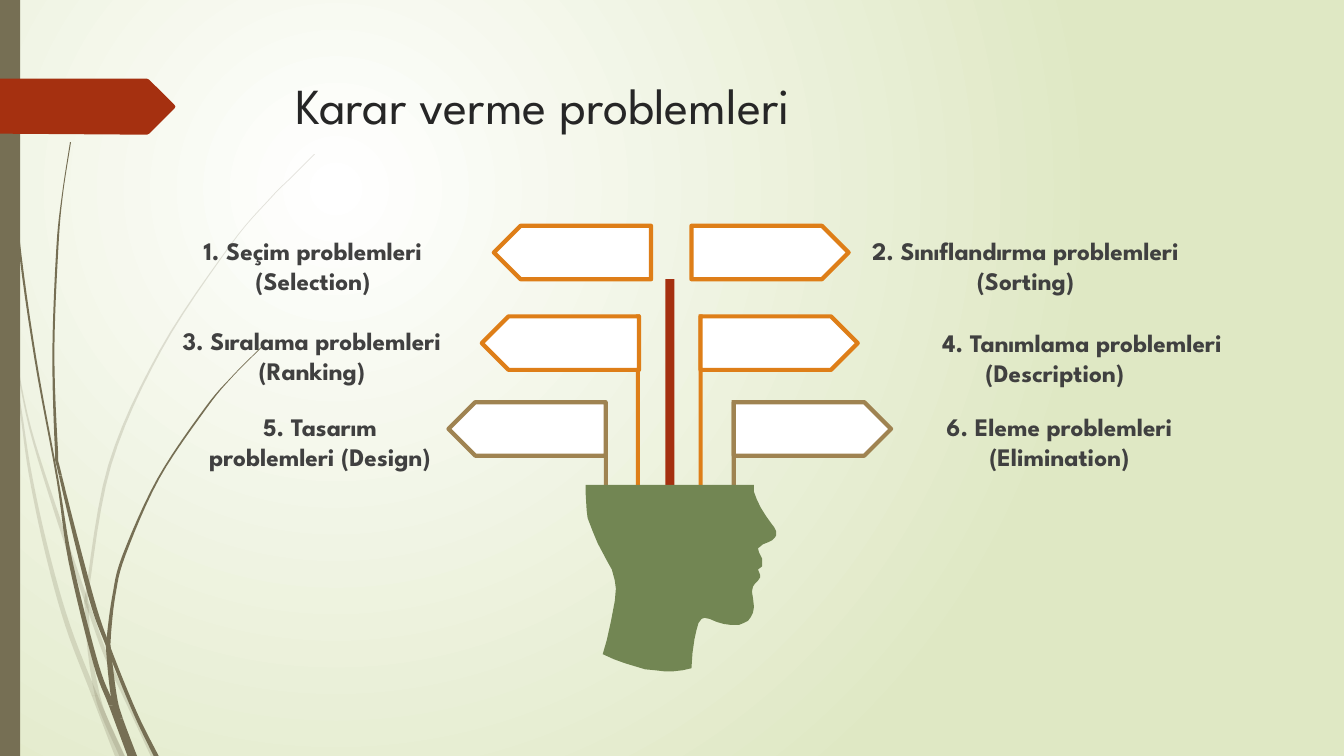
from dataclasses import dataclass

from lxml.etree import SubElement
from pptx import Presentation
from pptx.dml.color import RGBColor
from pptx.enum.shapes import MSO_SHAPE
from pptx.enum.text import PP_ALIGN
from pptx.oxml.ns import qn
from pptx.util import Pt


@dataclass(frozen=True)
class Theme:
    font: str = "League Spartan"
    title_size: int = 36
    label_size: int = 18
    title: str = "262626"
    label: str = "404040"
    white: str = "FFFFFF"
    edge: str = "DFE8C4"
    stem: str = "766F54"
    red: str = "A53010"
    orange: str = "DE7E18"
    tan: str = "9F8351"
    green: str = "728653"


@dataclass(frozen=True)
class Box:
    left: float
    top: float
    width: float
    height: float

    def inner(self, left, top, width, height):
        return Box(self.left + left, self.top + top, width, height)

    def lengths(self):
        return [Pt(value) for value in (self.left, self.top, self.width, self.height)]


THEME = Theme()
PAGE = Box(0, 0, 960, 540)

WISP_GRID = (312, 750)
PALE_WISPS = [
    ((1, 6), [(0, 290, 1), (11, 348, 2), (21, 410, 2), (30, 470, 3), (46, 545, 4), (67, 620, 5),
              (94, 690, 6), (119, 750, 10)]),
    ((3, 4), [(14, 345, 1), (30, 425, 2), (60, 521, 4), (86, 597, 4), (90, 608, 4), (105, 650, 4),
              (125, 693, 4), (152, 750, 5)]),
    ((6, 7, 10), [(312, 153, 1), (290, 175, 1), (268, 197, 1), (228, 244, 1), (159, 348, 2), (109, 461, 3),
                  (87, 584, 3), (86, 603, 4), (89, 646, 4), (96, 687, 5), (104, 712, 5), (121, 750, 5)]),
]
DARK_WISPS = [
    ((4, 7), [(4, 0, 1), (8, 110, 1), (18, 233, 2), (35, 355, 2), (57, 475, 2), (70, 557, 4),
              (95, 658, 5), (111, 700, 6), (131, 750, 9)]),
    ((5, 7), [(70, 141, 1), (62, 193, 1), (57, 245, 2), (53, 349, 2), (56, 445, 3), (60, 472, 3),
              (90, 591, 5), (108, 643, 4), (134, 707, 4), (155, 750, 5)]),
    ((6, 7, 9), [(260, 344, 1), (231, 373, 1), (204, 405, 2), (157, 475, 2), (123, 551, 3), (113, 591, 3),
                 (108, 632, 4), (108, 648, 5), (113, 691, 6), (119, 713, 6), (134, 750, 4)]),
]
BANNER_GRID = (174, 56)
BANNER = [(0, 0), (146, 0), (148, 1), (173, 26), (174, 28), (173, 30), (148, 55), (146, 56), (0, 55)]
HEAD_GRID = (189, 185)
HEAD = [
    (0, 0), (167, 0), (167, 7), (170, 15), (174, 23), (179, 31), (184, 38), (187, 42), (189, 46), (189, 50),
    (188, 52), (185, 55), (181, 57), (176, 59), (171, 63), (172, 67), (175, 73), (175, 81), (171, 84),
    (173, 89), (173, 92), (171, 95), (168, 98), (166, 101), (165, 106), (166, 112), (167, 121), (166, 127),
    (164, 131), (161, 135), (157, 137), (152, 139), (144, 139), (137, 138), (130, 136), (123, 133),
    (118, 132), (115, 133), (112, 137), (110, 144), (108, 153), (106, 167), (105, 182), (96, 184), (87, 185),
    (78, 185), (69, 184), (59, 183), (49, 180), (39, 177), (28, 173), (17, 168), (21, 154), (25, 136),
    (29, 115), (30, 103), (29, 95), (26, 84), (21, 75), (12, 58), (7, 46), (2, 33), (1, 25), (0, 8),
]
SIGN_ROWS = [(161.3, 352.8, 493.9, THEME.orange), (226, 344.2, 500.4, THEME.orange),
             (287.3, 320.4, 524.2, THEME.tan)]
POSTS = [
    (431.3, 287.3, 2.9, 73.4, THEME.tan),
    (522.7, 285.8, 2.9, 73.4, THEME.tan),
    (454.3, 224.6, 2.9, 136.1, THEME.orange),
    (499, 224.6, 2.9, 136.1, THEME.orange),
    (475.2, 199.4, 6.5, 162, THEME.red),
]
LABELS = [
    ("1. Seçim problemleri (Selection)", 101.2, 164.2, 244.8, 0),
    ("2. Sınıflandırma problemleri (Sorting)", 605.8, 164.2, 253.4, 0),
    ("3. Sıralama problemleri (Ranking)", 110.5, 228.7, 224.6, 0),
    ("4. Tanımlama problemleri (Description)", 610.6, 230.4, 285.8, 39),
    ("5. Tasarım problemleri (Design)", 136.1, 290.2, 185, 0),
    ("6. Eleme problemleri (Elimination)", 634.3, 290.2, 244.8, 0),
]


def paint(shape, fill):
    shape.shadow.inherit = False
    shape.fill.solid()
    shape.fill.fore_color.rgb = RGBColor.from_string(fill)
    shape.line.fill.background()
    return shape


def add_preset(page, box, kind, fill):
    return paint(page.shapes.add_shape(kind, *box.lengths()), fill)


def add_outline(page, box, grid, points, fill):
    corners = [(Pt(box.left + x * box.width / grid[0]), Pt(box.top + y * box.height / grid[1]))
               for x, y in points]
    builder = page.shapes.build_freeform(*corners[0])
    builder.add_line_segments(corners[1:], close=True)
    return paint(builder.convert_to_shape(), fill)


def add_text(page, box, text, size, color, bold=False, align=PP_ALIGN.LEFT, indent=0):
    frame = page.shapes.add_textbox(*box.lengths()).text_frame
    frame.word_wrap = True
    para = frame.paragraphs[0]
    para.alignment = align
    para._p.get_or_add_pPr().set("indent", str(Pt(indent)))
    span = para.add_run()
    span.text = text
    for name, value in {"name": THEME.font, "size": Pt(size), "bold": bold}.items():
        setattr(span.font, name, value)
    span.font.color.rgb = RGBColor.from_string(color)


def smooth_rows(rows, steps):
    padded = [rows[0], *rows, rows[-1]]
    curve = [[(2 * q + (r - p) * t + (2 * p - 5 * q + 4 * r - s) * t**2 + (3 * q - p - 3 * r + s) * t**3) / 2
              for p, q, r, s in zip(*knots)]
             for knots in zip(padded, padded[1:], padded[2:], padded[3:])
             for t in (step / steps for step in range(steps))]
    return curve + [rows[-1]]


def draw_background(page):
    fill = page.background.fill
    fill.gradient()
    for stop, color in zip(fill.gradient_stops, (THEME.white, THEME.edge)):
        stop.color.rgb = RGBColor.from_string(color)
    linear = next(page.element.iter(qn("a:lin")))
    gradient = linear.getparent()
    gradient.remove(linear)
    circle = SubElement(gradient, qn("a:path"), path="circle")
    SubElement(circle, qn("a:fillToRect"), l="50000", t="50000", r="100000", b="100000")


def draw_wisps(page, box, wisps, opacity, steps=6):
    for cuts, rows in wisps:
        curve = smooth_rows(rows, steps)
        for first, last in zip((0, *cuts), (*cuts, len(rows) - 1)):
            piece = curve[first * steps:last * steps + 1]
            points = [(x - width / 2, y) for x, y, width in piece]
            points += [(x + width / 2, y) for x, y, width in reversed(piece)]
            shape = add_outline(page, box, WISP_GRID, points, THEME.stem)
            color = next(shape.element.spPr.iter(qn("a:srgbClr")))
            SubElement(color, qn("a:alpha"), val=str(opacity * 1000))


def draw_frame(page, box):
    for wisps, opacity in ((PALE_WISPS, 20), (DARK_WISPS, 100)):
        draw_wisps(page, box.inner(0, 0, 224.64, box.height), wisps, opacity)
    add_preset(page, box.inner(0, 0, 14.4, box.height), MSO_SHAPE.RECTANGLE, THEME.stem)
    add_outline(page, box.inner(0, 56.2, 125.3, 40), BANNER_GRID, BANNER, THEME.red)
    add_text(page, box.inner(204, 49.5, 702, 100.8), "Karar verme problemleri", THEME.title_size, THEME.title)


def draw_signpost(page, box):
    for *place, color in POSTS:
        add_preset(page, box.inner(*place), MSO_SHAPE.RECTANGLE, color)
    add_outline(page, box.inner(418.3, 346.3, 136.1, 133.2), HEAD_GRID, HEAD, THEME.green)
    for top, left_side, right_side, color in SIGN_ROWS:
        for left, flip in ((left_side, "1"), (right_side, "0")):
            sign = add_preset(page, box.inner(left, top, 112.3, 38.2), MSO_SHAPE.PENTAGON, THEME.white)
            sign.line.color.rgb = RGBColor.from_string(color)
            sign.line.width = Pt(3)
            sign.element.spPr.find(qn("a:xfrm")).set("flipH", flip)


def draw_labels(page, box):
    for text, left, top, width, indent in LABELS:
        add_text(page, box.inner(left, top, width, 51.1), text, THEME.label_size, THEME.label,
                 True, PP_ALIGN.CENTER, indent)


deck = Presentation()
deck.slide_width, deck.slide_height = Pt(PAGE.width), Pt(PAGE.height)
page = deck.slides.add_slide(deck.slide_layouts[6])
draw_background(page)
for draw in (draw_frame, draw_signpost, draw_labels):
    draw(page, PAGE)
deck.save("out.pptx")
